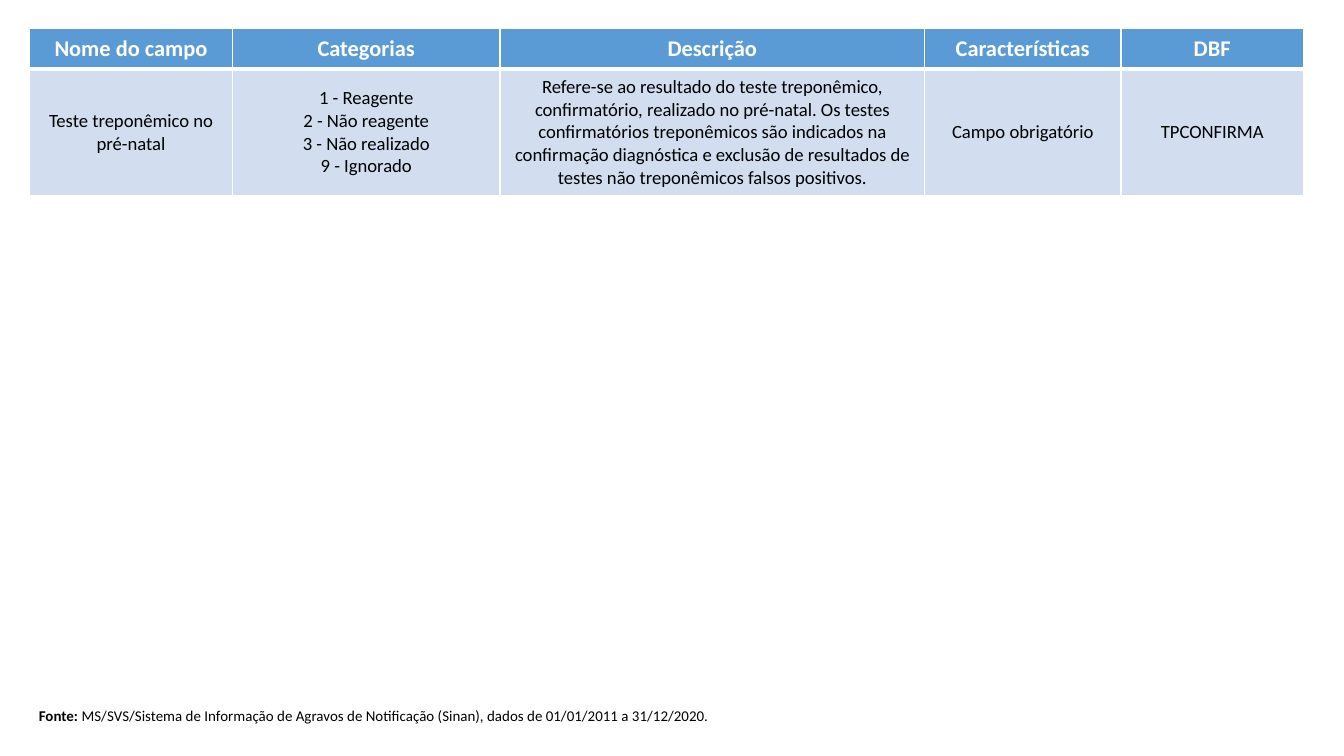
from lxml.etree import SubElement
from pptx import Presentation
from pptx.dml.color import RGBColor as RGB
from pptx.enum.text import MSO_ANCHOR as ANCHOR, MSO_AUTO_SIZE as AUTO, PP_ALIGN as ALIGN
from pptx.oxml.ns import qn
from pptx.util import Inches, Pt

SLIDE_WIDTH = Inches(10)
SLIDE_HEIGHT = SLIDE_WIDTH * 9 // 16
COLORS = {"white": "FFFFFF", "black": "000000", "header": "5B9BD5", "body": "D2DEEF"}
COL_WIDTHS = [1.51, 1.99, 3.16, 1.46, 1.36]
HEADER = ["Nome do campo", "Categorias", "Descrição", "Características", "DBF"]
FIELD = [
    "Teste treponêmico no pré-natal",
    "1 - Reagente\n2 - Não reagente\n3 - Não realizado\n9 - Ignorado",
    "Refere-se ao resultado do teste treponêmico, confirmatório, realizado no "
    "pré-natal. Os testes confirmatórios treponêmicos são indicados na confirmação "
    "diagnóstica e exclusão de resultados de testes não treponêmicos falsos positivos.",
    "Campo obrigatório",
    "TPCONFIRMA",
]
ROWS = [
    {"texts": HEADER, "height": 0.29, "fill": "header", "color": "white",
     "font": {"size": Pt(12), "bold": True}, "bottom": 3},
    {"texts": FIELD, "height": 0.94, "fill": "body", "color": "black",
     "font": {"size": Pt(10), "bold": False}, "bottom": 1},
]
CELL_FORMAT = {
    "vertical_anchor": ANCHOR.MIDDLE,
    "margin_left": Inches(0.07), "margin_right": Inches(0.07),
    "margin_top": Inches(0.05), "margin_bottom": Inches(0.05),
}


def set_attrs(obj, values):
    """Set each named attribute on an object."""
    for name, value in values.items():
        setattr(obj, name, value)


def format_font(font, color, values):
    """Apply the slide's typeface, a colour and further font values."""
    set_attrs(font, {"name": "Calibri", **values})
    font.color.rgb = RGB.from_string(COLORS[color])


def add_borders(cell, bottom):
    """Give a cell white borders, with the bottom width in points."""
    tcPr = cell._tc.get_or_add_tcPr()
    for side, width in {"L": 1, "R": 1, "T": 1, "B": bottom}.items():
        ln = SubElement(tcPr, qn(f"a:ln{side}"), w=str(Pt(width)))
        fill = SubElement(ln, qn("a:solidFill"))
        SubElement(fill, qn("a:srgbClr"), val=COLORS["white"])


def fill_cell(cell, text, row):
    """Write one cell in the format of its row."""
    add_borders(cell, row["bottom"])
    cell.fill.solid()
    cell.fill.fore_color.rgb = RGB.from_string(COLORS[row["fill"]])
    set_attrs(cell, CELL_FORMAT)
    cell.text_frame.text = text
    for p in cell.text_frame.paragraphs:
        p.alignment = ALIGN.CENTER
        for r in p.runs:
            format_font(r.font, row["color"], row["font"])


def add_field_table(s):
    """Add the table that describes the data field."""
    size = sum(COL_WIDTHS), sum(row["height"] for row in ROWS)
    box = [Inches(v) for v in (0.22, 0.21, *size)]
    table = s.shapes.add_table(len(ROWS), len(COL_WIDTHS), *box).table
    for col, width in zip(table.columns, COL_WIDTHS):
        col.width = Inches(width)
    for i, row in enumerate(ROWS):
        table.rows[i].height = Inches(row["height"])
        for cell, text in zip(table.rows[i].cells, row["texts"]):
            fill_cell(cell, text, row)


def add_source(s, label, text):
    """Add the source line with a bold label."""
    sp = s.shapes.add_textbox(*[Inches(v) for v in (0.19, 5.21, 5.38, 0.24)])
    tf = sp.text_frame
    set_attrs(tf, {"word_wrap": True, "auto_size": AUTO.SHAPE_TO_FIT_TEXT})
    for part, bold in ((label, True), (text, False)):
        r = tf.paragraphs[0].add_run()
        r.text = part
        format_font(r.font, "black", {"size": Pt(8), "bold": bold})


def main():
    """Build and save the slide."""
    prs = Presentation()
    set_attrs(prs, {"slide_width": SLIDE_WIDTH, "slide_height": SLIDE_HEIGHT})
    s = prs.slides.add_slide(prs.slide_layouts[6])
    add_field_table(s)
    add_source(s, "Fonte: ", "MS/SVS/Sistema de Informação de Agravos de Notificação "
               "(Sinan), dados de 01/01/2011 a 31/12/2020.")
    prs.save("out.pptx")


if __name__ == "__main__":
    main()
